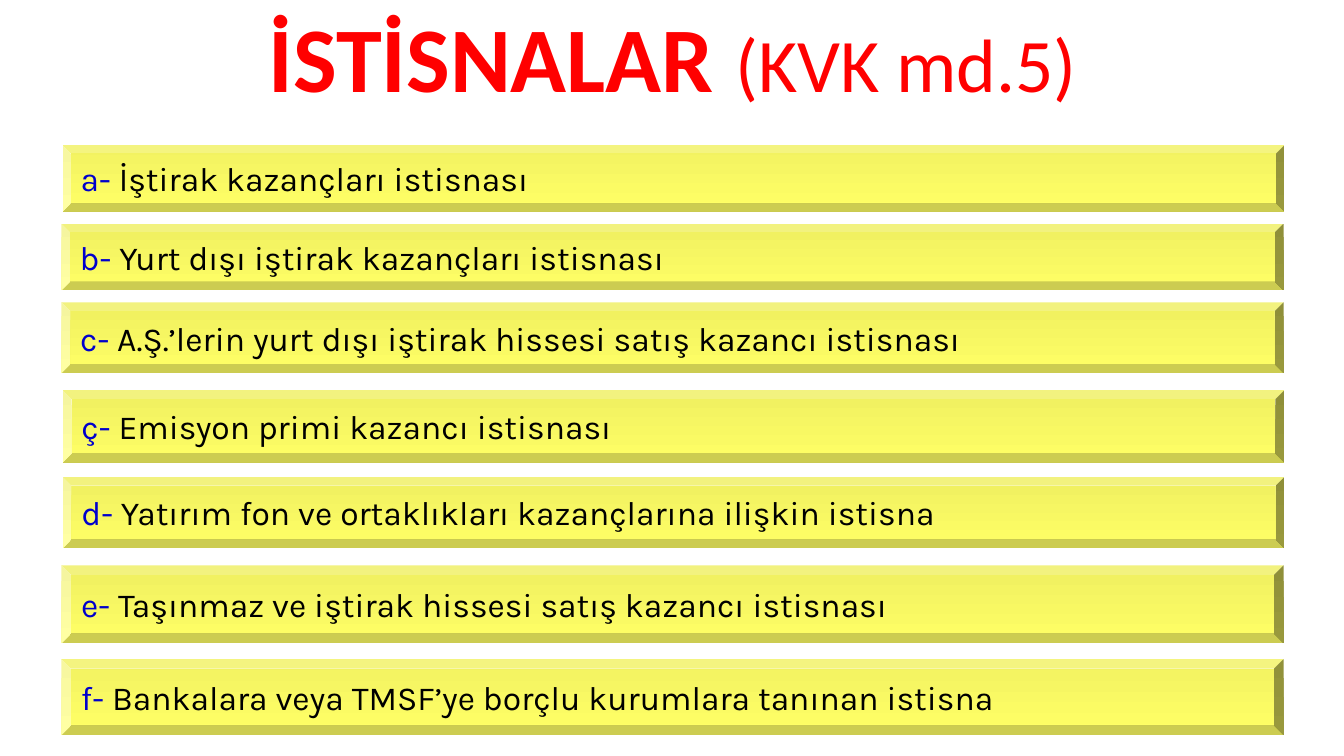
import pptx
import pptx.util
import pptx.dml.color
import pptx.enum.shapes
import pptx.enum.text

Inches = pptx.util.Inches
Pt = pptx.util.Pt

TITLE = [("İSTİSNALAR ", 66, True), ("(KVK md.5)", 54, False)]
EXEMPTIONS = [
    ("a-", "İştirak kazançları istisnası", 0.62, 1.44, 0.66, "F2F261"),
    ("b-", "Yurt dışı iştirak kazançları istisnası", 0.61, 2.22, 0.66, "EFEF60"),
    ("c-", "A.Ş.’lerin yurt dışı iştirak hissesi satış kazancı istisnası", 0.61, 3, 0.7, "EFEF5F"),
    ("ç-", "Emisyon primi kazancı istisnası", 0.62, 3.87, 0.72, "EFEF60"),
    ("d-", "Yatırım fon ve ortaklıkları kazançlarına ilişkin istisna", 0.62, 4.73, 0.71, "EFEF60"),
    ("e-", "Taşınmaz ve iştirak hissesi satış kazancı istisnası", 0.61, 5.61, 0.77, "EFEF60"),
    ("f-", "Bankalara veya TMSF’ye borçlu kurumlara tanınan istisna", 0.61, 6.54, 0.75, "F2F261"),
]
BAR_WIDTH = 12.12
BAR_BOTTOM = "FFFF66"


def color(value):
    return pptx.dml.color.RGBColor.from_string(value)


def add_title(page):
    title = page.shapes.title
    title.left, title.top = Inches(0.2), Inches(0.21)
    title.width, title.height = Inches(12.95), Inches(0.82)
    frame = title.text_frame
    frame.auto_size = pptx.enum.text.MSO_AUTO_SIZE.NONE
    frame.vertical_anchor = pptx.enum.text.MSO_ANCHOR.MIDDLE
    para = frame.paragraphs[0]
    para.alignment = pptx.enum.text.PP_ALIGN.CENTER
    para.line_spacing = 0.9
    for text, size, bold in TITLE:
        span = para.add_run()
        span.text = text
        span.font.name = "Calibri"
        span.font.size = Pt(size)
        span.font.bold = bold
        span.font.color.rgb = color("FF0000")


def add_bar(page, letter, text, left, top, height, shade):
    bar = page.shapes.add_shape(
        pptx.enum.shapes.MSO_SHAPE.BEVEL,
        Inches(left), Inches(top), Inches(BAR_WIDTH), Inches(height))
    bar.adjustments[0] = 0.125
    bar.shadow.inherit = False
    bar.line.fill.background()
    bar.fill.gradient()
    bar.fill.gradient_angle = 270
    for stop, value in zip(bar.fill.gradient_stops, (shade, BAR_BOTTOM)):
        stop.color.rgb = color(value)

    frame = bar.text_frame
    frame.word_wrap = False
    frame.vertical_anchor = pptx.enum.text.MSO_ANCHOR.MIDDLE
    para = frame.paragraphs[0]
    para.alignment = pptx.enum.text.PP_ALIGN.LEFT
    indents = para._p.get_or_add_pPr()
    indents.set("marL", str(Inches(0.38)))
    indents.set("indent", str(-Inches(0.38)))
    para.font.name = "Karla"
    para.font.size = Pt(24)
    for words, value in ((letter, "0000CC"), (" " + text, "000000")):
        span = para.add_run()
        span.text = words
        span.font.color.rgb = color(value)


def main():
    deck = pptx.Presentation()
    deck.slide_width, deck.slide_height = Inches(13.33), Inches(7.5)
    page = deck.slides.add_slide(deck.slide_layouts[5])
    add_title(page)
    for exemption in EXEMPTIONS:
        add_bar(page, *exemption)
    deck.save("out.pptx")


if __name__ == "__main__":
    main()
